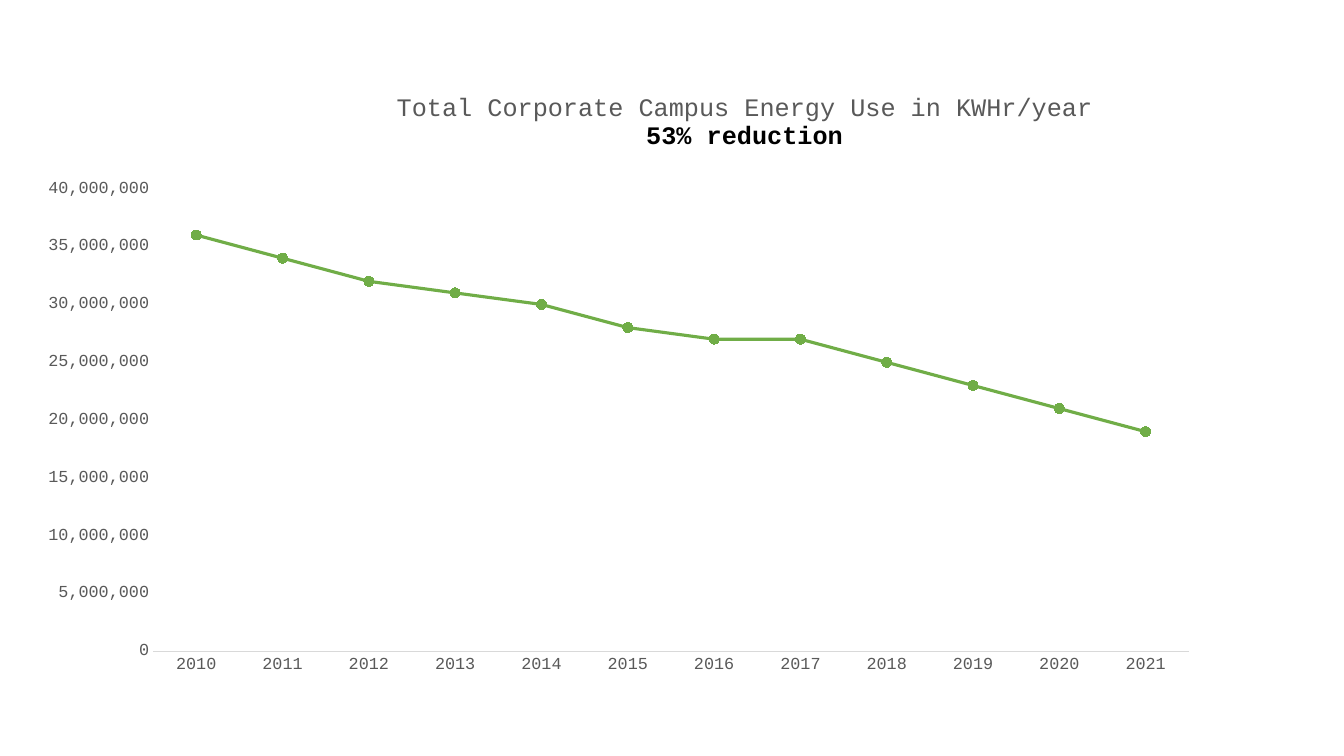
from lxml.etree import SubElement
from pptx import Presentation
from pptx.chart.data import CategoryChartData
from pptx.dml.color import RGBColor
from pptx.enum.chart import XL_CHART_TYPE, XL_MARKER_STYLE, XL_TICK_MARK
from pptx.oxml.ns import qn
from pptx.util import Cm, Pt

FONT = "Courier New"
GREEN, GREY, PALE, BLACK = "70AD47", "595959", "D9D9D9", "000000"
TITLE = [
    ("Total Corporate Campus Energy Use in KWHr/year", GREY, False),
    ("53% reduction", BLACK, True),
]
FIRST_YEAR = 2010
ENERGY_MILLIONS = [36, 34, 32, 31, 30, 28, 27, 27, 25, 23, 21, 19]
CHART_BOX = (0.61, 2.11, 29.95, 15.21)
PLOT_BOX = (3.86, 4.76, 26.1, 11.66)
TITLE_POS = (9.92, 2.27)


def rgb(color):
    return RGBColor.from_string(color)


def style_font(font, size, color, bold=False):
    font.name, font.size, font.bold = FONT, Pt(size), bold
    font.color.rgb = rgb(color)


def add_text(p, text, size=18, color=GREY, bold=False):
    r = p.add_run()
    r.text = text
    style_font(r.font, size, color, bold)


def place(parent, index, box, inner=False):
    for old in parent.findall(qn("c:layout")):
        parent.remove(old)
    layout = SubElement(parent, qn("c:layout"))
    parent.insert(index, layout)
    manual = SubElement(layout, qn("c:manualLayout"))
    left, top, width, height = CHART_BOX
    fractions = [(box[0] - left) / width, (box[1] - top) / height]
    settings = [("xMode", "edge"), ("yMode", "edge")]
    if inner:
        settings.insert(0, ("layoutTarget", "inner"))
        fractions += [box[2] / width, box[3] / height]
    settings += [(k, f"{v:.4f}") for k, v in zip("xywh", fractions)]
    for name, value in settings:
        SubElement(manual, qn(f"c:{name}")).set("val", value)


def style_axis(axis):
    axis.has_major_gridlines = False
    axis.major_tick_mark = axis.minor_tick_mark = XL_TICK_MARK.NONE
    style_font(axis.tick_labels.font, 12, GREY)


def add_energy_chart(s):
    data = CategoryChartData(number_format="#,##0")
    data.categories = [str(FIRST_YEAR + i) for i in range(len(ENERGY_MILLIONS))]
    data.add_series("Series 1", [v * 1_000_000 for v in ENERGY_MILLIONS])
    chart = s.shapes.add_chart(XL_CHART_TYPE.LINE_MARKERS_STACKED,
                               *map(Cm, CHART_BOX), data).chart
    style_font(chart.font, 10, BLACK)
    chart.has_legend = False

    tf = chart.chart_title.text_frame
    for i, (text, color, bold) in enumerate(TITLE):
        p = tf.add_paragraph() if i else tf.paragraphs[0]
        add_text(p, text, color=color, bold=bold)
    chart.chart_title.include_in_layout = False

    years, energy = chart.category_axis, chart.value_axis
    style_axis(years)
    years.format.line.color.rgb = rgb(PALE)
    years.format.line.width = Pt(0.75)
    style_axis(energy)
    energy.format.line.fill.background()
    energy.minimum_scale, energy.maximum_scale = 0, 40_000_000
    energy.major_unit = 5_000_000
    energy.tick_labels.number_format = "#,##0"
    energy.tick_labels.number_format_is_linked = False

    chart.plots[0].vary_by_categories = False
    series = chart.plots[0].series[0]
    series.smooth = False
    series.format.line.color.rgb = rgb(GREEN)
    series.format.line.width = Pt(2.25)
    marker = series.marker
    marker.style, marker.size = XL_MARKER_STYLE.CIRCLE, 7
    marker.format.fill.solid()
    marker.format.fill.fore_color.rgb = rgb(GREEN)
    marker.format.line.color.rgb = rgb(GREEN)

    place(chart.chart_title._element, 1, TITLE_POS)
    place(chart._chartSpace.find(".//" + qn("c:plotArea")), 0, PLOT_BOX, inner=True)


def main():
    prs = Presentation()
    prs.slide_width, prs.slide_height = Cm(33.87), Cm(19.05)
    s = prs.slides.add_slide(prs.slide_layouts[6])
    add_energy_chart(s)
    prs.save("out.pptx")


if __name__ == "__main__":
    main()
